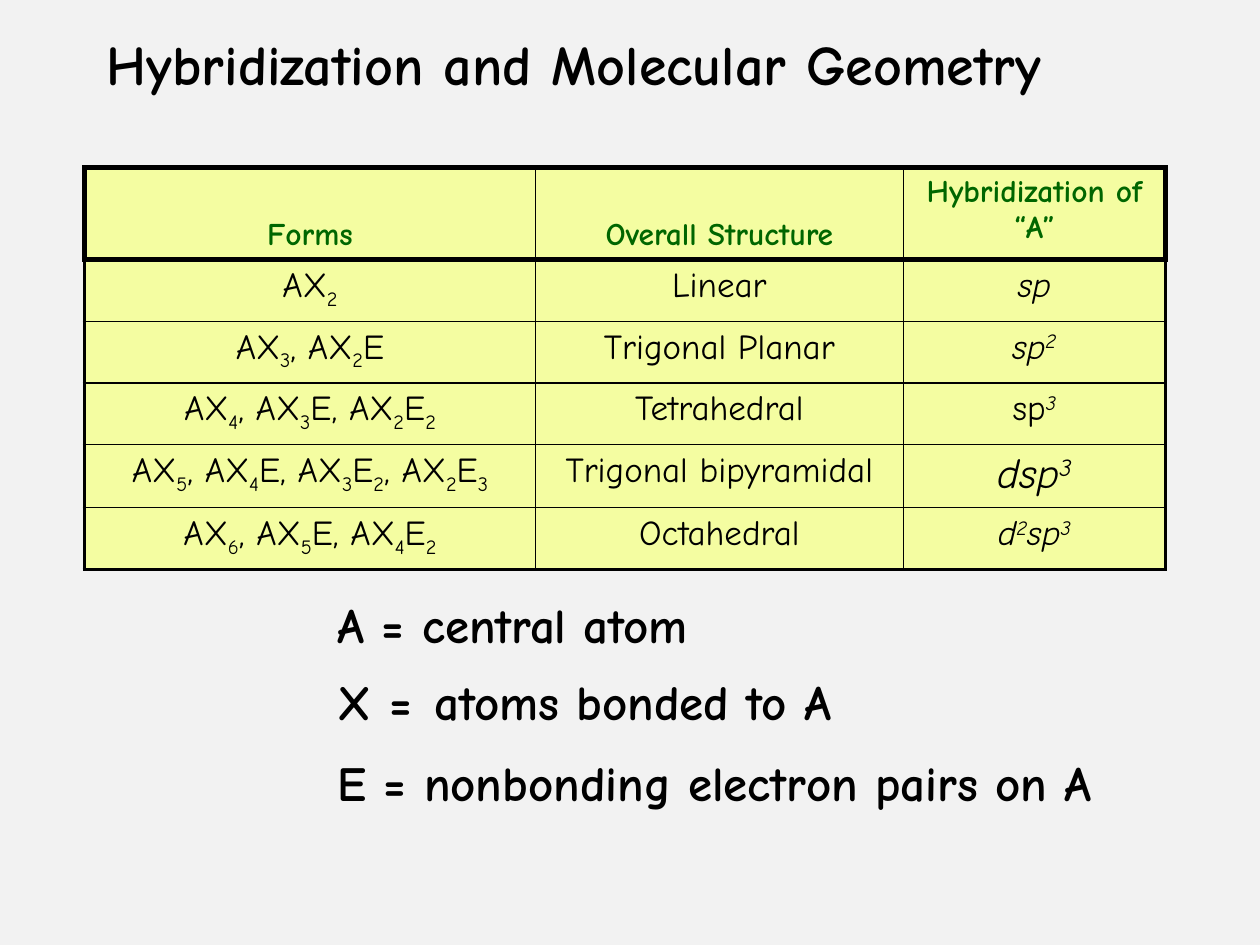
import itertools

import pptx
import pptx.dml.color
import pptx.enum.text
import pptx.oxml
import pptx.oxml.ns
import pptx.util
from pptx.util import Inches

COLORS = {"background": "F2F2F2", "cell": "F4FDA1", "heading": "006600", "ink": "000000"}
FONT = "Comic Neue"
COLUMN_WIDTHS = (3.58, 2.92, 2.08)
HEADINGS = ("Forms", "Overall Structure", "Hybridization of “A”")
GEOMETRIES = (
    ("AX2", "Linear", "sp"),
    ("AX3, AX2E", "Trigonal Planar", "sp2"),
    ("AX4, AX3E, AX2E2", "Tetrahedral", "sp3"),
    ("AX5, AX4E, AX3E2, AX2E3", "Trigonal bipyramidal", "dsp3"),
    ("AX6, AX5E, AX4E2", "Octahedral", "d2sp3"),
)
SCRIPT_BASELINES = (-25, 0, 30)
LEGEND = (
    (0, 3.45, 0.57, (("A = central atom", 28),)),
    (0.5, 4.69, 0.7, (("X =", 28), (" ", 36), ("atoms bonded to A", 28))),
    (1.25, 6.81, 0.57, (("E = nonbonding electron pairs on A", 28),)),
)


def rgb(name):
    """Return the named colour."""
    return pptx.dml.color.RGBColor.from_string(COLORS[name])


def add_run(paragraph, text, size, color="ink", baseline=0, **formats):
    """Append a formatted run, raised or lowered by a baseline percentage."""
    run = paragraph.add_run()
    run.text = text
    run.font.color.rgb = rgb(color)
    for attribute, value in {"name": FONT, "size": pptx.util.Pt(size), **formats}.items():
        setattr(run.font, attribute, value)
    if baseline:
        run.font._element.set("baseline", str(baseline * 1000))


def add_line(slide, box, parts, **frame_formats):
    """Place one bold line of text made of (text, size) parts."""
    frame = slide.shapes.add_textbox(*map(Inches, box)).text_frame
    for attribute, value in frame_formats.items():
        setattr(frame, attribute, value)
    for text, size in parts:
        add_run(frame.paragraphs[0], text, size, bold=True)


def set_borders(cell, widths):
    """Draw the cell's borders from a dict of side letter to points."""
    for side, width in widths.items():
        cell._tc.get_or_add_tcPr().append(pptx.oxml.parse_xml(
            f'<a:ln{side} {pptx.oxml.ns.nsdecls("a")} w="{pptx.util.Pt(width)}">'
            f'<a:solidFill><a:srgbClr val="{COLORS["ink"]}"/></a:solidFill></a:ln{side}>'))


def fill_geometry_cell(paragraph, text, row, column):
    """Write a body cell, setting its digits as subscripts or superscripts."""
    size = 24 if text == "dsp3" else 20
    for is_digit, characters in itertools.groupby(text, str.isdigit):
        italic = column == 2 and (is_digit or row != 3)
        baseline = SCRIPT_BASELINES[column] if is_digit else 0
        add_run(paragraph, "".join(characters), size, baseline=baseline, bold=False, italic=italic)


def add_geometry_table(slide, box):
    """Place the table of forms, structures and hybridizations."""
    rows = (HEADINGS, *GEOMETRIES)
    last_row, last_column = len(rows) - 1, len(HEADINGS) - 1
    table = slide.shapes.add_table(len(rows), len(HEADINGS), *map(Inches, box)).table
    table.first_row = table.horz_banding = False
    for column, width in zip(table.columns, COLUMN_WIDTHS):
        column.width = Inches(width)
    for r, texts in enumerate(rows):
        table.rows[r].height = Inches(0.49 if r else 0.73)
        outer = 2.25 if r else 3
        for c, text in enumerate(texts):
            cell = table.cell(r, c)
            set_borders(cell, {
                "L": outer if c == 0 else 1,
                "R": outer if c == last_column else 1,
                "T": 3 if r < 2 else 1,
                "B": 3 if r == 0 else 2.25 if r == last_row else 1,
            })
            cell.fill.solid()
            cell.fill.fore_color.rgb = rgb("cell")
            paragraph = cell.text_frame.paragraphs[0]
            paragraph.alignment = pptx.enum.text.PP_ALIGN.CENTER
            if r:
                fill_geometry_cell(paragraph, text, r, c)
            else:
                add_run(paragraph, text, 18, "heading", bold=True)
                if c < last_column:
                    cell.vertical_anchor = pptx.enum.text.MSO_ANCHOR.BOTTOM


def add_legend(slide, left, top):
    """Place the meanings of the letters A, X and E."""
    for offset, width, height, parts in LEGEND:
        add_line(slide, (left, top + offset, width, height), parts, word_wrap=False,
                 auto_size=pptx.enum.text.MSO_AUTO_SIZE.SHAPE_TO_FIT_TEXT)


def main():
    """Build and save the slide."""
    deck = pptx.Presentation()
    deck.slide_width, deck.slide_height = Inches(10), Inches(7.5)
    slide = deck.slides.add_slide(deck.slide_layouts[6])
    slide.background.fill.solid()
    slide.background.fill.fore_color.rgb = rgb("background")
    add_line(slide, (0.75, 0, 8.83, 1), (("Hybridization and Molecular Geometry", 32),),
             word_wrap=True, vertical_anchor=pptx.enum.text.MSO_ANCHOR.MIDDLE)
    add_geometry_table(slide, (0.67, 1.33, 8.58, 3.18))
    add_legend(slide, 2.58, 4.67)
    deck.save("out.pptx")


if __name__ == "__main__":
    main()
